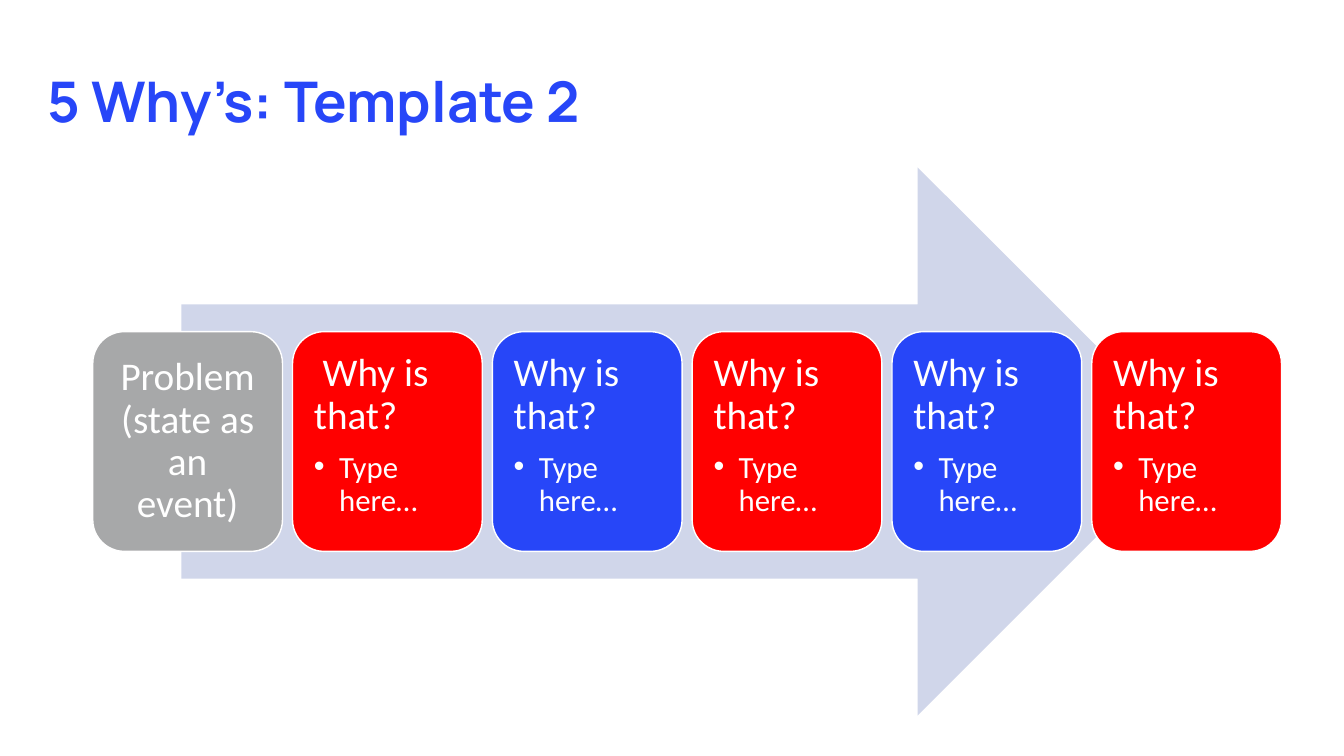
from lxml.etree import SubElement
from pptx import Presentation
from pptx.dml.color import RGBColor
from pptx.enum.shapes import MSO_SHAPE
from pptx.enum.text import MSO_ANCHOR, MSO_AUTO_SIZE, PP_ALIGN
from pptx.oxml.ns import qn
from pptx.util import Inches, Pt

COLOURS = {"blue": "2746F8", "red": "FF0000", "grey": "A7A8A9",
           "pale": "D0D6EA", "white": "FFFFFF"}
PROBLEM = "Problem (state as an event)"
QUESTIONS = [" Why is that?"] + ["Why is that?"] * 4
ANSWER = "Type here…"

CARD_LEFT, CARD_RIGHT, CARD_TOP, CARD_HEIGHT = 0.92, 12.71, 3.29, 2.18
CARD_GAP = 0.1
CARD_COUNT = len(QUESTIONS) + 1
CARD_WIDTH = (CARD_RIGHT - CARD_LEFT - CARD_GAP * (CARD_COUNT - 1)) / CARD_COUNT


def colour(name):
    return RGBColor.from_string(COLOURS[name])


def apply_formats(target, formats):
    for attribute, value in formats.items():
        setattr(target, attribute, value)


class WhySlide:
    heading = {"name": "Manrope", "size": Pt(40), "bold": True}
    lead = {"name": "Calibri", "size": Pt(28)}
    detail = {"name": "Calibri", "size": Pt(22)}

    def __init__(self, presentation):
        self.slide = presentation.slides.add_slide(presentation.slide_layouts[5])

    def frame(self, shape, inset, anchor):
        margins = {f"margin_{side}": Inches(inset)
                   for side in ("left", "top", "right", "bottom")}
        apply_formats(shape.text_frame, {
            "word_wrap": True, "vertical_anchor": anchor,
            "auto_size": MSO_AUTO_SIZE.NONE, **margins})
        return shape.text_frame

    def set_text(self, paragraph, text, font, ink, **layout):
        paragraph.text = text
        apply_formats(paragraph, {"alignment": PP_ALIGN.LEFT,
                                  "space_before": Pt(0), **layout})
        apply_formats(paragraph.runs[0].font, font)
        paragraph.runs[0].font.color.rgb = colour(ink)

    def title(self, text):
        title = self.slide.shapes.title
        apply_formats(title, {"left": Inches(0.47), "top": Inches(0.07),
                              "width": Inches(12.38), "height": Inches(1.19)})
        frame = self.frame(title, 0, MSO_ANCHOR.TOP)
        self.set_text(frame.paragraphs[0], text, self.heading, "blue",
                      line_spacing=Pt(90.2))

    def block(self, preset, left, top, width, height, fill):
        block = self.slide.shapes.add_shape(
            preset, Inches(left), Inches(top), Inches(width), Inches(height))
        block.shadow.inherit = False
        block.fill.solid()
        block.fill.fore_color.rgb = colour(fill)
        block.line.fill.background()
        return block

    def card(self, column, fill, lead, answer=None):
        """Place a rounded card in a column, with a bulleted answer if given."""
        left = CARD_LEFT + column * (CARD_WIDTH + CARD_GAP)
        card = self.block(MSO_SHAPE.ROUNDED_RECTANGLE, left, CARD_TOP,
                          CARD_WIDTH, CARD_HEIGHT, fill)
        card.line.color.rgb = colour("white")
        card.line.width = Pt(1)
        frame = self.frame(card, 0.12, MSO_ANCHOR.TOP if answer else MSO_ANCHOR.MIDDLE)
        self.set_text(frame.paragraphs[0], lead, self.lead, "white",
                      line_spacing=0.9, space_after=Pt(9.8),
                      alignment=PP_ALIGN.LEFT if answer else PP_ALIGN.CENTER)
        if answer:
            bullet = frame.add_paragraph()
            self.set_text(bullet, answer, self.detail, "white", level=1,
                          line_spacing=0.9, space_after=Pt(3.3))
            properties = bullet._p.get_or_add_pPr()
            properties.set("marL", str(Inches(0.25)))
            properties.set("indent", str(Inches(-0.25)))
            SubElement(properties, qn("a:buFont")).set("typeface", "Arial")
            SubElement(properties, qn("a:buChar")).set("char", "•")


def main():
    presentation = Presentation()
    presentation.slide_width = Inches(13.33)
    presentation.slide_height = Inches(7.5)
    page = WhySlide(presentation)
    page.title("5 Why’s: Template 2")
    page.block(MSO_SHAPE.RIGHT_ARROW, 1.8, 1.66, 10.02, 5.44, "pale")
    page.card(0, "grey", PROBLEM)
    for column, question in enumerate(QUESTIONS, start=1):
        page.card(column, "red" if column % 2 else "blue", question, ANSWER)
    presentation.save("out.pptx")


if __name__ == "__main__":
    main()
